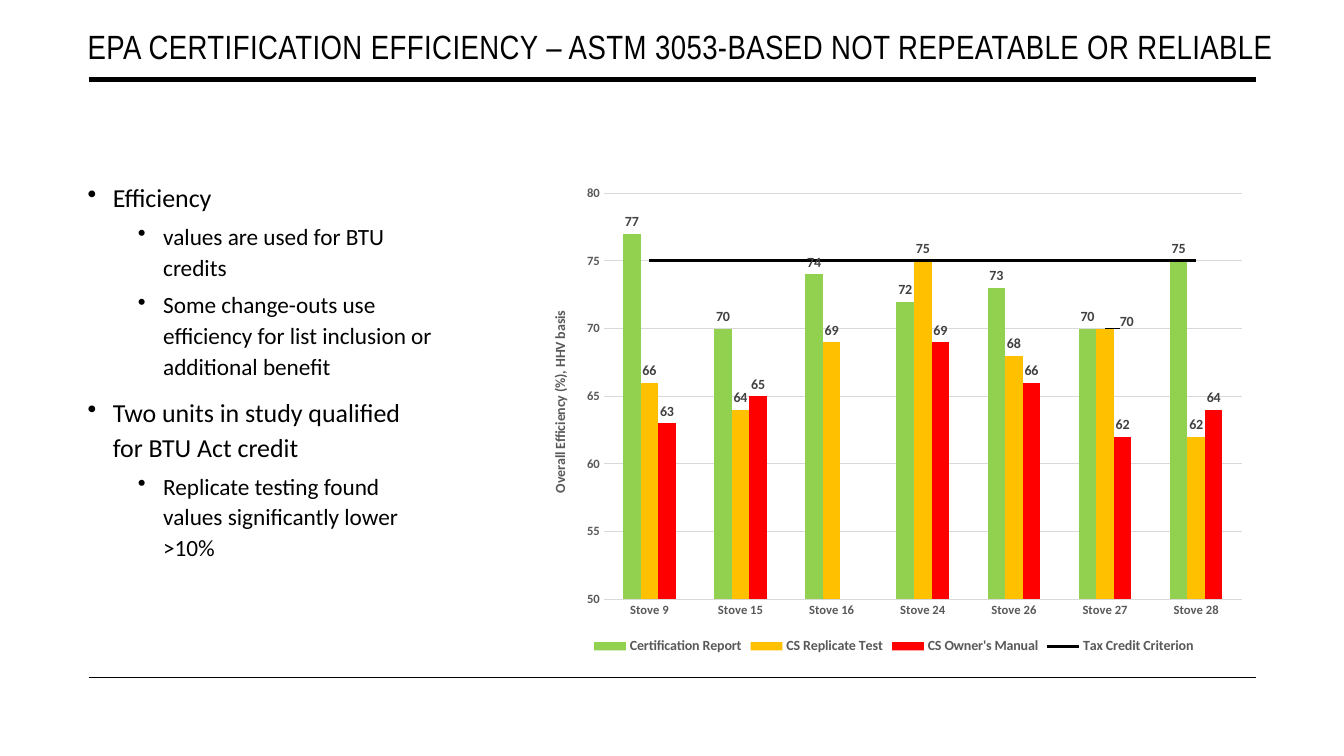
from lxml import etree
from pptx import Presentation
from pptx.chart.data import CategoryChartData
from pptx.dml.color import RGBColor
from pptx.enum.chart import (XL_CHART_TYPE, XL_LABEL_POSITION, XL_LEGEND_POSITION,
                             XL_MARKER_STYLE, XL_TICK_MARK)
from pptx.enum.shapes import MSO_CONNECTOR
from pptx.oxml import parse_xml
from pptx.oxml.ns import nsdecls, qn
from pptx.util import Inches, Pt

COLUMNS = XL_CHART_TYPE.COLUMN_CLUSTERED
OUTSIDE_END = XL_LABEL_POSITION.OUTSIDE_END
LEGEND_BOTTOM = XL_LEGEND_POSITION.BOTTOM
NO_MARKER = XL_MARKER_STYLE.NONE
NO_TICK = XL_TICK_MARK.NONE
STRAIGHT = MSO_CONNECTOR.STRAIGHT

COLORS = {"black": "000000", "label": "404040", "axis": "595959", "grid": "D9D9D9",
          "Certification Report": "92D050", "CS Replicate Test": "FFC000",
          "CS Owner's Manual": "FF0000"}


def style_font(font, size, color, name="Calibri", bold=False):
    font.size = Pt(size)
    font.name = name
    font.bold = bold
    font.color.rgb = RGBColor.from_string(COLORS[color])


def style_line(line, color, width):
    line.color.rgb = RGBColor.from_string(COLORS[color])
    line.width = Pt(width)


presentation = Presentation()
presentation.slide_width = Inches(13.33)
presentation.slide_height = Inches(7.5)
slide = presentation.slides.add_slide(presentation.slide_layouts[6])

# Rules above and below the content
for y, width in ((0.79, 3.5), (6.72, 1)):
    rule = slide.shapes.add_connector(STRAIGHT, Inches(0.88), Inches(y), Inches(12.46), Inches(y))
    style_line(rule.line, "black", width)
    etree.SubElement(rule._element.spPr, qn("a:effectLst"))

# Title
title_box = slide.shapes.add_textbox(Inches(0.77), Inches(0.21), Inches(12.56), Inches(1.05))
title_box.text_frame.word_wrap = True
paragraph = title_box.text_frame.paragraphs[0]
run = paragraph.add_run()
run.text = "EPA CERTIFICATION EFFICIENCY – ASTM 3053-BASED NOT REPEATABLE OR RELIABLE"
style_font(paragraph.font, 24, "black", "Arial Narrow")
run._r.get_or_add_rPr().set("spc", "30")

# Bullet list
BULLETS = [
    (0, "Efficiency"),
    (1, "values are used for BTU credits"),
    (1, "Some change-outs use efficiency for list inclusion or additional benefit"),
    (0, "Two units in study qualified for BTU Act credit"),
    (1, "Replicate testing found values significantly lower >10%"),
]
LEVELS = [(18.5, 10, 0.25), (16.6, 5, 0.75)]  # size, space before, indent
body_box = slide.shapes.add_textbox(Inches(0.77), Inches(1.72), Inches(3.65), Inches(4.2))
body = body_box.text_frame
body.word_wrap = True
for index, (level, text) in enumerate(BULLETS):
    paragraph = body.add_paragraph() if index else body.paragraphs[0]
    size, space, indent = LEVELS[level]
    paragraph.text = text
    paragraph.level = level
    paragraph.line_spacing = 1.1
    paragraph.space_before = Pt(space)
    style_font(paragraph.font, size, "black")
    properties = paragraph._p.get_or_add_pPr()
    properties.set("marL", str(Inches(indent)))
    properties.set("indent", str(Inches(-0.25)))
    bullet = parse_xml(f'<a:buChar {nsdecls("a")} char="•"/>')
    properties.find(qn("a:defRPr")).addprevious(bullet)

# Efficiency chart
chart_data = CategoryChartData(number_format="0")
chart_data.categories = [f"Stove {number}" for number in (9, 15, 16, 24, 26, 27, 28)]
chart_data.add_series("Certification Report", (77, 70, 74, 72, 73, 70, 75))
chart_data.add_series("CS Replicate Test", (66, 64, 69, 75, 68, 70, 62))
chart_data.add_series("CS Owner's Manual", (63, 65, None, 69, 66, 62, 64))
chart_data.add_series("Tax Credit Criterion", [75] * 7)
chart = slide.shapes.add_chart(COLUMNS, Inches(5.27), Inches(1.75), Inches(7.19), Inches(4.78),
                               chart_data).chart
style_font(chart.font, 10, "black", bold=True)
chart.has_title = False
chart.has_legend = True
chart.legend.position = LEGEND_BOTTOM
chart.legend.include_in_layout = False
style_font(chart.legend.font, 10, "axis", bold=True)

# Axes
for axis in (chart.category_axis, chart.value_axis):
    axis.major_tick_mark = axis.minor_tick_mark = NO_TICK
    style_font(axis.tick_labels.font, 9, "axis", bold=True)
style_line(chart.category_axis.format.line, "grid", 0.75)
value_axis = chart.value_axis
value_axis.minimum_scale, value_axis.maximum_scale, value_axis.major_unit = 50, 80, 5
value_axis.format.line.fill.background()
style_line(value_axis.major_gridlines.format.line, "grid", 0.75)
axis_title = value_axis.axis_title.text_frame.paragraphs[0]
axis_title.text = "Overall Efficiency (%), HHV basis"
style_font(axis_title.font, 10, "axis", bold=True)

# Tax credit criterion becomes a line on the same axes
columns = chart.plots[0]
columns.gap_width = 219
columns.overlap = 0
columns.vary_by_categories = False
bar_chart = columns._element
criterion = bar_chart.findall(qn("c:ser"))[3]
for bar_setting in criterion.findall(qn("c:invertIfNegative")):
    criterion.remove(bar_setting)
line_chart = parse_xml(f'<c:lineChart {nsdecls("c")}><c:grouping val="standard"/>'
                       '<c:varyColors val="0"/><c:marker val="1"/></c:lineChart>')
line_chart.insert(2, criterion)
for axis_id in bar_chart.findall(qn("c:axId")):
    etree.SubElement(line_chart, qn("c:axId")).set("val", axis_id.get("val"))
bar_chart.addnext(line_chart)
criterion_series = chart.plots[1].series[0]
style_line(criterion_series.format.line, "black", 2.25)
criterion_series.marker.style = NO_MARKER
criterion_series.smooth = False

# Columns and their labels
for series in columns.series:
    series.format.fill.solid()
    series.format.fill.fore_color.rgb = RGBColor.from_string(COLORS[series.name])
    labels = series.data_labels
    labels.show_value = True
    labels.number_format = "0"
    labels.number_format_is_linked = False
    labels.position = OUTSIDE_END
    style_font(labels.font, 10, "label", bold=True)

# Stove 27 replicate label sits to the right of its column
replicate_series = columns.series[1]
shifted_label = replicate_series.points[5].data_label
style_font(shifted_label.font, 10, "label", bold=True)
shifted_label.position = OUTSIDE_END
label_index = replicate_series._element.find(f'{qn("c:dLbls")}/{qn("c:dLbl")}/{qn("c:idx")}')
label_index.addnext(parse_xml(f'<c:layout {nsdecls("c")}><c:manualLayout>'
                              '<c:x val="0.03"/><c:y val="0.01"/></c:manualLayout></c:layout>'))

# Plot area position
plot_area = bar_chart.getparent()
for old_layout in plot_area.findall(qn("c:layout")):
    plot_area.remove(old_layout)
plot_area.insert(0, parse_xml(
    f'<c:layout {nsdecls("c")}><c:manualLayout><c:layoutTarget val="inner"/>'
    '<c:xMode val="edge"/><c:yMode val="edge"/><c:x val="0.1"/><c:y val="0.035"/>'
    '<c:w val="0.88"/><c:h val="0.843"/></c:manualLayout></c:layout>'))

presentation.save("out.pptx")
